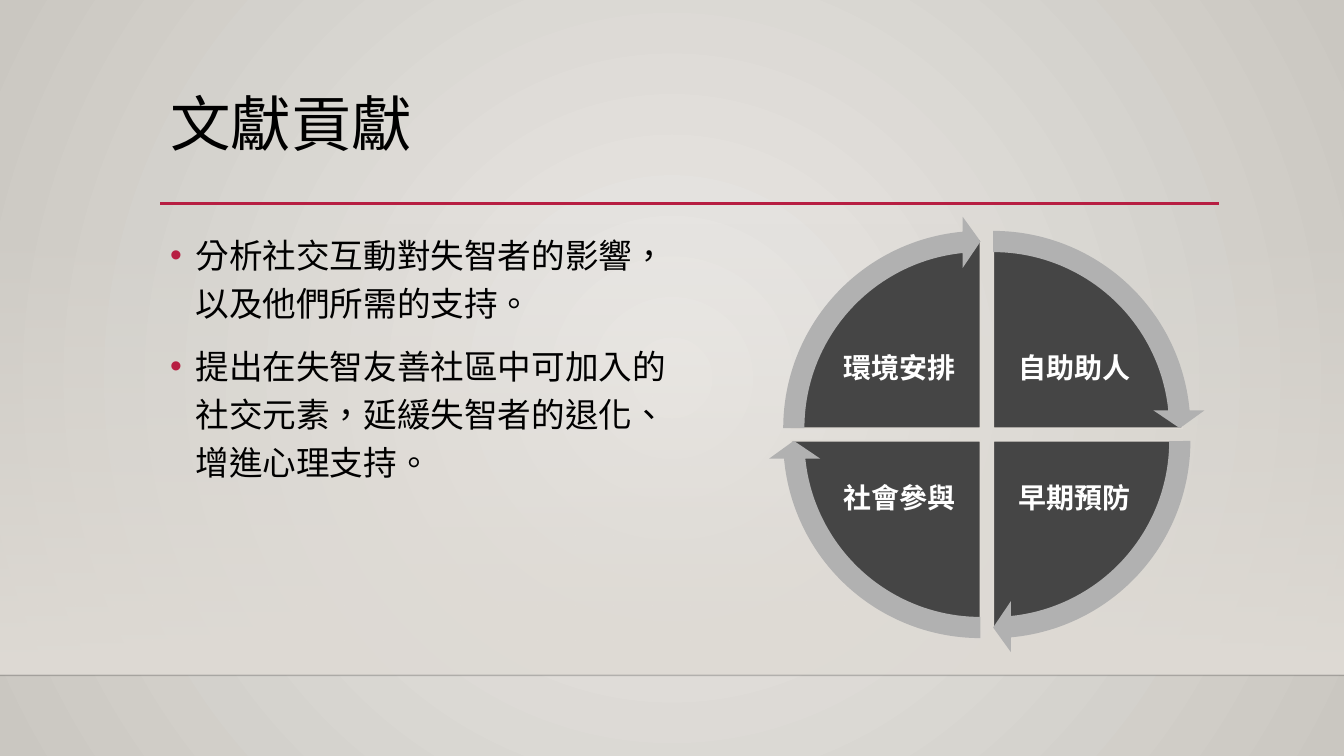
import dataclasses

import lxml.etree
import pptx
import pptx.dml.color
import pptx.enum.shapes
import pptx.enum.text
import pptx.oxml
import pptx.oxml.ns
import pptx.util

Cm = pptx.util.Cm
Pt = pptx.util.Pt
qn = pptx.oxml.ns.qn
Shapes = pptx.enum.shapes.MSO_SHAPE
Align = pptx.enum.text.PP_ALIGN
Anchor = pptx.enum.text.MSO_ANCHOR


@dataclasses.dataclass(frozen=True)
class Theme:
    font: str = "Noto Sans CJK SC"
    title_size: float = 43.2
    body_size: float = 24
    label_size: float = 20
    text: str = "000000"
    label: str = "FFFFFF"
    accent: str = "B71E42"
    glow: str = "ECEAE7"
    edge: str = "CAC7C1"
    floor: str = "DFDBD5"
    horizon: str = "000001"
    wedge: str = "454545"
    arrow: str = "B1B1B1"


def rgb(color):
    return pptx.dml.color.RGBColor.from_string(color)


def add_child(parent, tag, **attributes):
    child = lxml.etree.SubElement(parent, qn(tag))
    for name, value in attributes.items():
        child.set(name, str(value))
    return child


def add_bullet(paragraph, color):
    properties = paragraph._p.get_or_add_pPr()
    properties.set("marL", str(Cm(0.64)))
    properties.set("indent", str(-Cm(0.64)))
    add_child(add_child(properties, "a:buClr"), "a:srgbClr", val=color)
    add_child(properties, "a:buFont", typeface="Arial")
    add_child(properties, "a:buChar", char="•")


def write_text(shape, texts, font, size, color, bold=False, align=Align.LEFT,
               anchor=Anchor.TOP, line_spacing=1.0, gap=0, bullet=None, insets=None):
    frame = shape.text_frame
    frame.word_wrap = True
    frame.vertical_anchor = anchor
    if insets is not None:
        frame.margin_left, frame.margin_top, frame.margin_right, frame.margin_bottom = map(Cm, insets)
    for index, text in enumerate(texts):
        paragraph = frame.add_paragraph() if index else frame.paragraphs[0]
        if bullet:
            add_bullet(paragraph, bullet)
        paragraph.alignment = align
        paragraph.line_spacing = line_spacing
        paragraph.space_before = Pt(gap if index else 0)
        run = paragraph.add_run()
        run.text = text
        run.font.size = Pt(size)
        run.font.bold = bold
        run.font.color.rgb = rgb(color)
        run.font.name = font
        properties = run._r.get_or_add_rPr()
        properties.set("lang", "zh-TW")
        add_child(properties, "a:ea", typeface=font)


def fill_gradient(fill, owner, stops, angle=None):
    fill.gradient()
    gradient = next(owner.iter(qn("a:gradFill")))
    for child in list(gradient):
        gradient.remove(child)
    stop_list = add_child(gradient, "a:gsLst")
    for position, color, opacity in stops:
        stop = add_child(stop_list, "a:gs", pos=position * 1000)
        tint = add_child(stop, "a:srgbClr", val=color)
        if opacity < 100:
            add_child(tint, "a:alpha", val=opacity * 1000)
    if angle is None:
        center = add_child(gradient, "a:path", path="circle")
        add_child(center, "a:fillToRect", l=50000, t=50000, r=50000, b=50000)
    else:
        add_child(gradient, "a:lin", ang=angle * 60000, scaled=0)


class SlideBuilder:
    def __init__(self, slide, theme):
        self.slide = slide
        self.theme = theme

    def background(self):
        theme = self.theme
        fill_gradient(self.slide.background.fill, self.slide._element,
                      [(0, theme.glow, 100), (100, theme.edge, 100)])

    def floor(self, left, top, width, height):
        color = self.theme.floor
        shape = self.shape(Shapes.RECTANGLE, left, top, width, height, color)
        fill_gradient(shape.fill, shape._element.spPr, [(0, color, 0), (100, color, 100)], angle=90)

    def line(self, left, right, y, color, width, opacity=100):
        connector = self.slide.shapes.add_connector(
            pptx.enum.shapes.MSO_CONNECTOR.STRAIGHT, Cm(left), Cm(y), Cm(right), Cm(y))
        connector.line.color.rgb = rgb(color)
        connector.line.width = Pt(width)
        if opacity < 100:
            tint = next(connector._element.spPr.iter(qn("a:srgbClr")))
            add_child(tint, "a:alpha", val=opacity * 1000)
        add_child(connector._element.spPr, "a:effectLst")

    def text(self, left, top, width, height, texts, **style):
        box = self.slide.shapes.add_textbox(Cm(left), Cm(top), Cm(width), Cm(height))
        write_text(box, texts, self.theme.font, **style)

    def shape(self, kind, left, top, width, height, color, outline=None, adjustments=()):
        shape = self.slide.shapes.add_shape(kind, Cm(left), Cm(top), Cm(width), Cm(height))
        shape.shadow.inherit = False
        shape.fill.solid()
        shape.fill.fore_color.rgb = rgb(color)
        if outline:
            shape.line.color.rgb = rgb(outline)
            shape.line.width = Pt(1.25)
        else:
            shape.line.fill.background()
        for index, value in enumerate(adjustments):
            shape.adjustments[index] = value
        return shape

    def round_shape(self, kind, center, diameter, color, **options):
        x, y = center
        self.shape(kind, x - diameter / 2, y - diameter / 2, diameter, diameter, color, **options)

    def cycle(self, center_x, center_y, quadrants):
        theme = self.theme
        quarter, full = 54, 216
        label_width, label_height = 3.51, 2.62
        arrows = []
        for index, (label, side, level) in enumerate(quadrants):
            start = (162 + quarter * index) % full
            center = (center_x + 0.16 * side, center_y + 0.16 * level)
            self.round_shape(Shapes.PIE, center, 9.53, theme.wedge, outline=theme.floor,
                             adjustments=(start, (start + quarter) % full))
            self.text(center_x + 2.21 * side - label_width / 2,
                      center_y + 1.64 * level - label_height / 2,
                      label_width, label_height, [label], size=theme.label_size,
                      color=theme.label, bold=True, align=Align.CENTER,
                      anchor=Anchor.MIDDLE, line_spacing=0.9, insets=(0.08,) * 4)
            arrows.append((center, start))
        for center, start in arrows:
            self.round_shape(Shapes.CIRCULAR_ARROW, center, 10.69, theme.arrow,
                             adjustments=(0.05, 3.28, start + 50.73, start, 0.06))


def main():
    presentation = pptx.Presentation()
    presentation.slide_width = Cm(33.87)
    presentation.slide_height = Cm(19.05)
    theme = Theme()
    builder = SlideBuilder(presentation.slides.add_slide(presentation.slide_layouts[6]), theme)

    builder.background()
    builder.floor(0, 5.61, 33.87, 11.4)
    builder.line(0, 33.87, 17.02, theme.horizon, 1, opacity=20)
    builder.line(4.04, 30.73, 5.13, theme.accent, 2.5)
    builder.text(4.04, 2.24, 26.67, 2.92, ["文獻貢獻"], size=theme.title_size,
                 color=theme.text, line_spacing=0.9, insets=(0.25, 0.13, 0.25, 0.13))
    builder.text(4.04, 5.59, 13.36, 8.31, [
        "分析社交互動對失智者的影響，以及他們所需的支持。",
        "提出在失智友善社區中可加入的社交元素，延緩失智者的退化、增進心理支持。",
    ], size=theme.body_size, color=theme.text, line_spacing=1.2, gap=10, bullet=theme.accent)
    builder.cycle(24.87, 10.95, [
        ("自助助人", 1, -1),
        ("早期預防", 1, 1),
        ("社會參與", -1, 1),
        ("環境安排", -1, -1),
    ])
    presentation.save("out.pptx")


if __name__ == "__main__":
    main()
